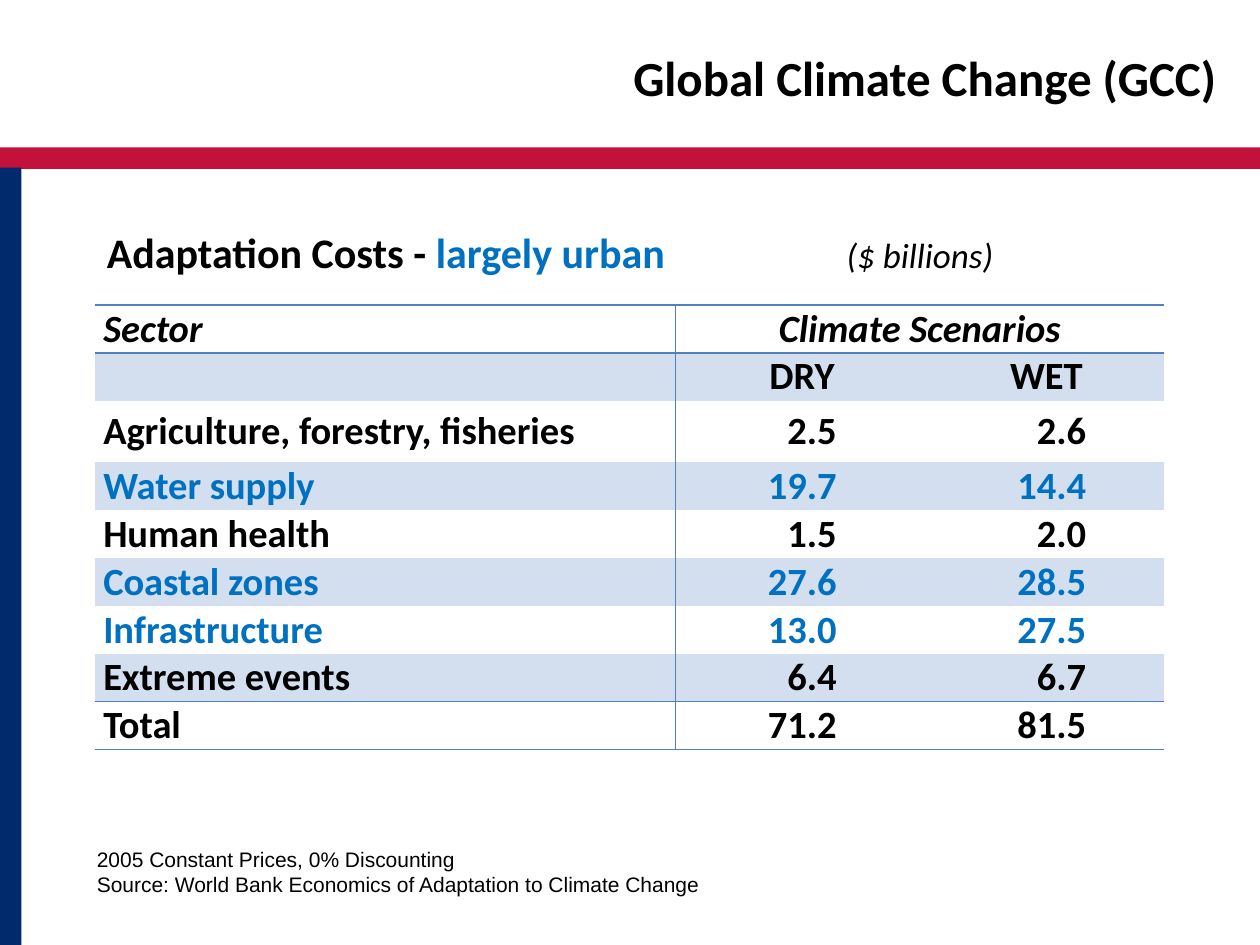
from typing import NamedTuple

from lxml import etree
from pptx import Presentation
from pptx.dml.color import RGBColor
from pptx.enum.shapes import MSO_SHAPE
from pptx.enum.text import MSO_ANCHOR, PP_ALIGN
from pptx.oxml.ns import qn
from pptx.util import Inches, Pt

COLORS = {
    "red": "C2113A",
    "navy": "002A6C",
    "black": "000000",
    "urban": "0070C0",
    "band": "D3DFEE",
    "rule": "4F81BD",
}


class Bar(NamedTuple):
    left: float
    top: float
    width: float
    height: float
    color: str


class Span(NamedTuple):
    text: str
    size: float
    color: str = "black"
    bold: bool = False
    italic: bool = False
    font: str = "Calibri"


class Sector(NamedTuple):
    name: str
    dry: str
    wet: str
    color: str = "black"


BARS = [Bar(0, 1.17, 10, 0.17, "red"), Bar(0, 1.33, 0.17, 6.17, "navy")]
SECTORS = [
    Sector("Agriculture, forestry, fisheries", "2.5", "2.6"),
    Sector("Water supply", "19.7", "14.4", "urban"),
    Sector("Human health", "1.5", "2.0"),
    Sector("Coastal zones", "27.6", "28.5", "urban"),
    Sector("Infrastructure", "13.0", "27.5", "urban"),
    Sector("Extreme events", "6.4", "6.7"),
    Sector("Total", "71.2", "81.5"),
]
COLUMN_WIDTHS = [4.61, 2.01, 1.87]
VALUE_INSETS = [0.07, 0.73, 0.62]  # right margins that line up the decimals
ROW_HEIGHT, FIRST_SECTOR_HEIGHT = 0.38, 0.49
HEADER_ROWS = 2


def rgb(name: str) -> RGBColor:
    return RGBColor.from_string(COLORS[name])


def add_span(paragraph, span: Span) -> None:
    run = paragraph.add_run()
    run.text = span.text
    font = run.font
    font.name, font.size = span.font, Pt(span.size)
    font.bold, font.italic = span.bold, span.italic
    font.color.rgb = rgb(span.color)


def draw_bar(slide, bar: Bar) -> None:
    shape = slide.shapes.add_shape(MSO_SHAPE.RECTANGLE, *map(Inches, bar[:4]))
    shape.shadow.inherit = False
    shape.fill.solid()
    shape.fill.fore_color.rgb = rgb(bar.color)
    shape.line.fill.background()


def draw_text(slide, box: tuple, lines: list[list[Span]],
              align=PP_ALIGN.LEFT, anchor=MSO_ANCHOR.TOP, tab: float = 0) -> None:
    frame = slide.shapes.add_textbox(*map(Inches, box)).text_frame
    frame.word_wrap = True
    frame.vertical_anchor = anchor
    for index, spans in enumerate(lines):
        paragraph = frame.add_paragraph() if index else frame.paragraphs[0]
        paragraph.alignment = align
        if tab:
            properties = paragraph._p.get_or_add_pPr()
            tabs = etree.SubElement(properties, qn("a:tabLst"))
            etree.SubElement(tabs, qn("a:tab"), pos=str(Inches(tab)), algn="l")
        for span in spans:
            add_span(paragraph, span)


def set_borders(cell, ruled_sides: set[str]) -> None:
    properties = cell._tc.get_or_add_tcPr()
    for side in "LRTB":
        line = etree.SubElement(properties, qn(f"a:ln{side}"), w=str(Pt(1)))
        if side in ruled_sides:
            fill = etree.SubElement(line, qn("a:solidFill"))
            etree.SubElement(fill, qn("a:srgbClr"), val=COLORS["rule"])
        else:
            etree.SubElement(line, qn("a:noFill"))


def style_cell(cell, row: int, column: int, last_row: int) -> None:
    sides = {"R"} if column == 0 else {"L"} if column == 1 else set()
    if row in (0, 1, last_row):
        sides.add("T")
    if row in (0, last_row - 1, last_row):
        sides.add("B")
    set_borders(cell, sides)
    if row % 2:
        cell.fill.solid()
        cell.fill.fore_color.rgb = rgb("band")
    else:
        cell.fill.background()
    cell.vertical_anchor = MSO_ANCHOR.MIDDLE
    cell.margin_left = cell.margin_right = Inches(0.07)
    cell.margin_top = cell.margin_bottom = 0


def write_cell(cell, text: str, align, color: str = "black", italic: bool = False) -> None:
    paragraph = cell.text_frame.paragraphs[0]
    paragraph.alignment = align
    add_span(paragraph, Span(text, 22, color, True, italic))


def draw_costs(slide) -> None:
    row_count = HEADER_ROWS + len(SECTORS)
    heights = [ROW_HEIGHT] * row_count
    heights[HEADER_ROWS] = FIRST_SECTOR_HEIGHT
    costs = slide.shapes.add_table(
        row_count, len(COLUMN_WIDTHS), Inches(0.75), Inches(2.42),
        Inches(sum(COLUMN_WIDTHS)), Inches(sum(heights))).table
    for column, width in zip(costs.columns, COLUMN_WIDTHS):
        column.width = Inches(width)
    for row, height in zip(costs.rows, heights):
        row.height = Inches(height)
    for row in range(row_count):
        for column in range(len(COLUMN_WIDTHS)):
            style_cell(costs.cell(row, column), row, column, row_count - 1)

    # Two header rows, scenarios spanning both value columns
    costs.cell(0, 1).merge(costs.cell(0, 2))
    write_cell(costs.cell(0, 0), "Sector", PP_ALIGN.LEFT, italic=True)
    write_cell(costs.cell(0, 1), "Climate Scenarios", PP_ALIGN.CENTER, italic=True)
    for column, scenario in enumerate(("DRY", "WET"), start=1):
        write_cell(costs.cell(1, column), scenario, PP_ALIGN.CENTER)

    # Sector rows
    for row, sector in enumerate(SECTORS, start=HEADER_ROWS):
        for column, text in enumerate(sector[:3]):
            cell = costs.cell(row, column)
            cell.margin_right = Inches(VALUE_INSETS[column])
            align = PP_ALIGN.RIGHT if column else PP_ALIGN.LEFT
            write_cell(cell, text, align, sector.color)


def main() -> None:
    deck = Presentation()
    deck.slide_width, deck.slide_height = Inches(10), Inches(7.5)
    slide = deck.slides.add_slide(deck.slide_layouts[6])

    # Frame
    for bar in BARS:
        draw_bar(slide, bar)

    # Cost table
    draw_costs(slide)

    # Table heading, with the unit at a tab stop
    draw_text(slide, (0.75, 1.75, 8.75, 0.67), [[
        Span("Adaptation Costs - ", 24, bold=True),
        Span("largely urban\t", 24, "urban", bold=True),
        Span("($ billions)", 20, italic=True),
    ]], tab=5.87)

    # Source note
    notes = ("2005 Constant Prices, 0% Discounting",
             "Source: World Bank Economics of Adaptation to Climate Change")
    draw_text(slide, (0.67, 6.58, 8.58, 0.67),
              [[Span(note, 12, font="Arial")] for note in notes],
              anchor=MSO_ANCHOR.MIDDLE)

    # Slide title
    draw_text(slide, (3.33, 0.33, 6.42, 0.57),
              [[Span("Global Climate Change (GCC)", 28, bold=True)]],
              align=PP_ALIGN.RIGHT)

    deck.save("out.pptx")


if __name__ == "__main__":
    main()
